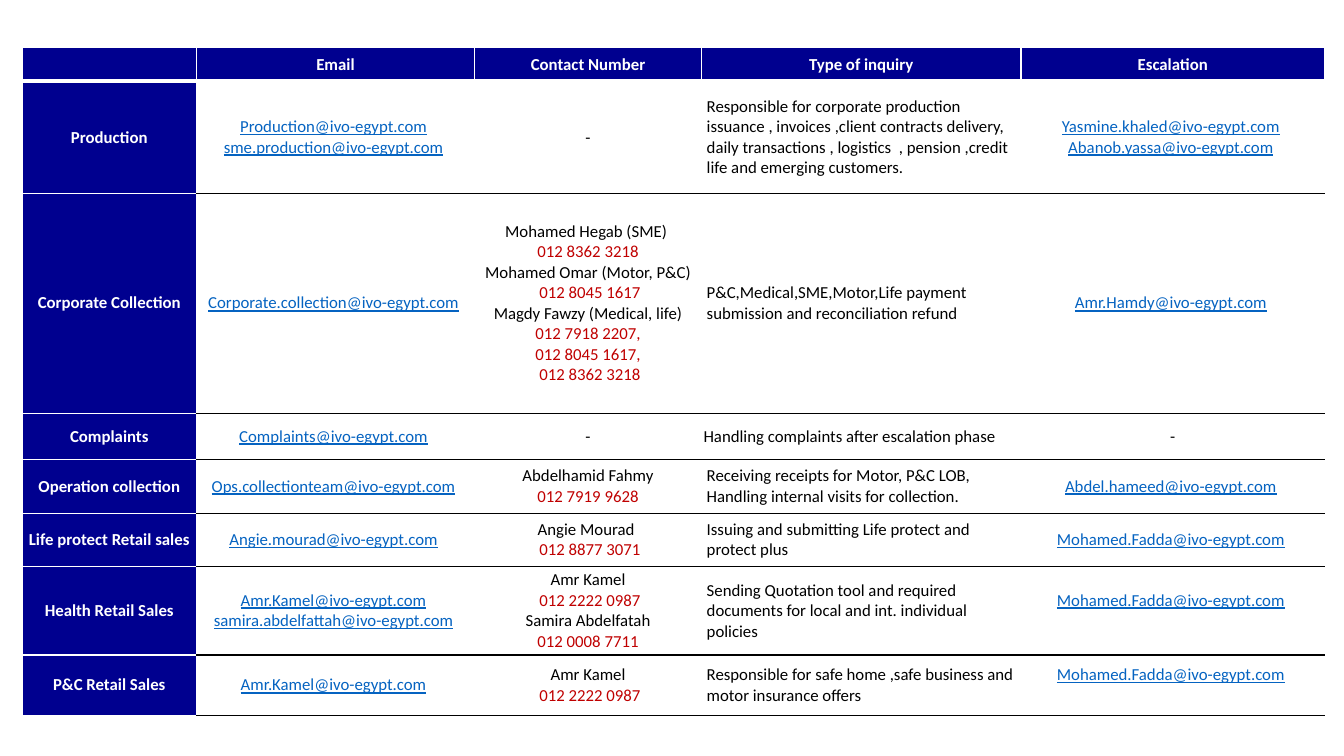
import pptx
import pptx.dml.color
import pptx.enum.text
import pptx.oxml.ns
import pptx.util
from lxml import etree
from pptx.util import Cm

NAVY, WHITE, BLACK, BLUE, RED = "00008F", "FFFFFF", "000000", "0563C1", "C00000"
DOMAIN = "ivo-egypt.com"
WIDTHS = [4.39, 7.01, 5.72, 8.05, 7.65]
HEIGHTS = [0.86, 2.82, 5.54, 1.17, 1.35, 1.35, 1.75, 1.52]
HEADS = ["", "Email", "Contact Number", "Type of inquiry", "Escalation"]
TEAMS = [
    ("Production", ["Production@", "sme.production@"], ["-"],
     ["Responsible for corporate production issuance , invoices ,client contracts delivery, "
      "daily transactions , logistics  , pension ,credit life and emerging customers."],
     ["Yasmine.khaled@", "Abanob.yassa@"]),
    ("Corporate Collection", ["Corporate.collection@"],
     ["Mohamed Hegab (SME) ", "012 8362 3218", "Mohamed Omar (Motor, P&C)", " 012 8045 1617",
      "Magdy Fawzy (Medical, life)", " 012 7918 2207, ", "012 8045 1617,", " 012 8362 3218"],
     ["P&C,Medical,SME,Motor,Life payment submission and reconciliation refund"],
     ["Amr.Hamdy@"]),
    ("Complaints", ["Complaints@"], ["-"],
     ["Handling complaints after escalation phase"], ["-"]),
    ("Operation collection", ["Ops.collectionteam@"], ["Abdelhamid Fahmy", "012 7919 9628"],
     ["Receiving receipts for Motor, P&C LOB, Handling internal visits for collection."],
     ["Abdel.hameed@"]),
    ("Life protect Retail sales", ["Angie.mourad@"], ["Angie Mourad ", " 012 8877 3071"],
     ["Issuing and submitting Life protect and protect plus"], ["Mohamed.Fadda@"]),
    ("Health Retail Sales", ["Amr.Kamel@", "samira.abdelfattah@"],
     ["Amr Kamel", " 012 2222 0987", "Samira Abdelfatah", "012 0008 7711"],
     ["Sending Quotation tool and required documents for local and int. individual policies"],
     ["Mohamed.Fadda@"]),
    ("P&C Retail Sales", ["Amr.Kamel@"], ["Amr Kamel", " 012 2222 0987"],
     ["Responsible for safe home ,safe business and motor insurance offers"],
     ["Mohamed.Fadda@"]),
]


def color(code):
    return pptx.dml.color.RGBColor.from_string(code)


def write(para, text, code=BLACK, bold=False, line=False):
    run = para.add_run()
    run.text = text
    font = run.font
    font.name, font.size = "Calibri", pptx.util.Pt(12)
    font.bold, font.underline = bold, line
    font.color.rgb = color(code)


def fill_line(para, text, bold):
    if not text:
        para._p.get_or_add_endParaRPr().set("sz", "1200")
    elif bold:
        write(para, text, code=WHITE, bold=True)
    elif text.endswith("@"):
        write(para, text + DOMAIN, code=BLUE, line=True)
        write(para, " ")
    else:
        write(para, text, code=RED if text.strip()[0].isdigit() else BLACK)


def border(cell, side, code, width):
    tag = pptx.oxml.ns.qn
    edge = etree.SubElement(cell._tc.get_or_add_tcPr(), tag("a:ln" + side),
                            w=str(pptx.util.Pt(width)))
    solid = etree.SubElement(edge, tag("a:solidFill"))
    etree.SubElement(solid, tag("a:srgbClr"), val=code)


def fill_cell(cell, lines, head=False, left=False, pad=(0.13, 0.08), lift=0,
              top=(WHITE, 1), base=(WHITE, 1)):
    cell.margin_left = cell.margin_right = Cm(pad[0])
    cell.margin_top, cell.margin_bottom = Cm(pad[1]), Cm(pad[1] + lift)
    cell.vertical_anchor = pptx.enum.text.MSO_ANCHOR.MIDDLE
    for side, style in zip("LRTB", [(WHITE, 1), (WHITE, 1), top, base]):
        border(cell, side, *style)
    if head:
        cell.fill.solid()
        cell.fill.fore_color.rgb = color(NAVY)
    else:
        cell.fill.background()
    align = pptx.enum.text.PP_ALIGN
    frame = cell.text_frame
    for pos, text in enumerate(lines):
        para = frame.add_paragraph() if pos else frame.paragraphs[0]
        para.alignment = align.LEFT if left else align.CENTER
        fill_line(para, text, head)


def add_grid(slide):
    grid = slide.shapes.add_table(len(HEIGHTS), len(WIDTHS), Cm(0.56), Cm(1.19),
                                  Cm(sum(WIDTHS)), Cm(sum(HEIGHTS))).table
    for col, width in zip(grid.columns, WIDTHS):
        col.width = Cm(width)
    for row, height in zip(grid.rows, HEIGHTS):
        row.height = Cm(height)
    return grid


def main():
    """Build the contact table slide and save it."""
    deck = pptx.Presentation()
    deck.slide_width, deck.slide_height = Cm(33.87), Cm(19.05)
    grid = add_grid(deck.slides.add_slide(deck.slide_layouts[6]))
    for col, head in enumerate(HEADS):
        fill_cell(grid.cell(0, col), [head], head=True, base=(WHITE, 3))
    for row, (team, *parts) in enumerate(TEAMS, 1):
        pad = (0.05, 0.03) if team == "Complaints" else (0.13, 0.08)
        first = (WHITE, 3)
        fill_cell(grid.cell(row, 0), [team], head=True, pad=pad,
                  top=first if row == 1 else (WHITE, 1))
        for col, lines in enumerate(parts, 1):
            high = col == 4 and row >= 6
            fill_cell(grid.cell(row, col), lines, left=col == 3, pad=pad,
                      lift=0.52 if high else 0,
                      top=first if row == 1 else (BLACK, 1), base=(BLACK, 1))
    deck.save("out.pptx")


if __name__ == "__main__":
    main()
